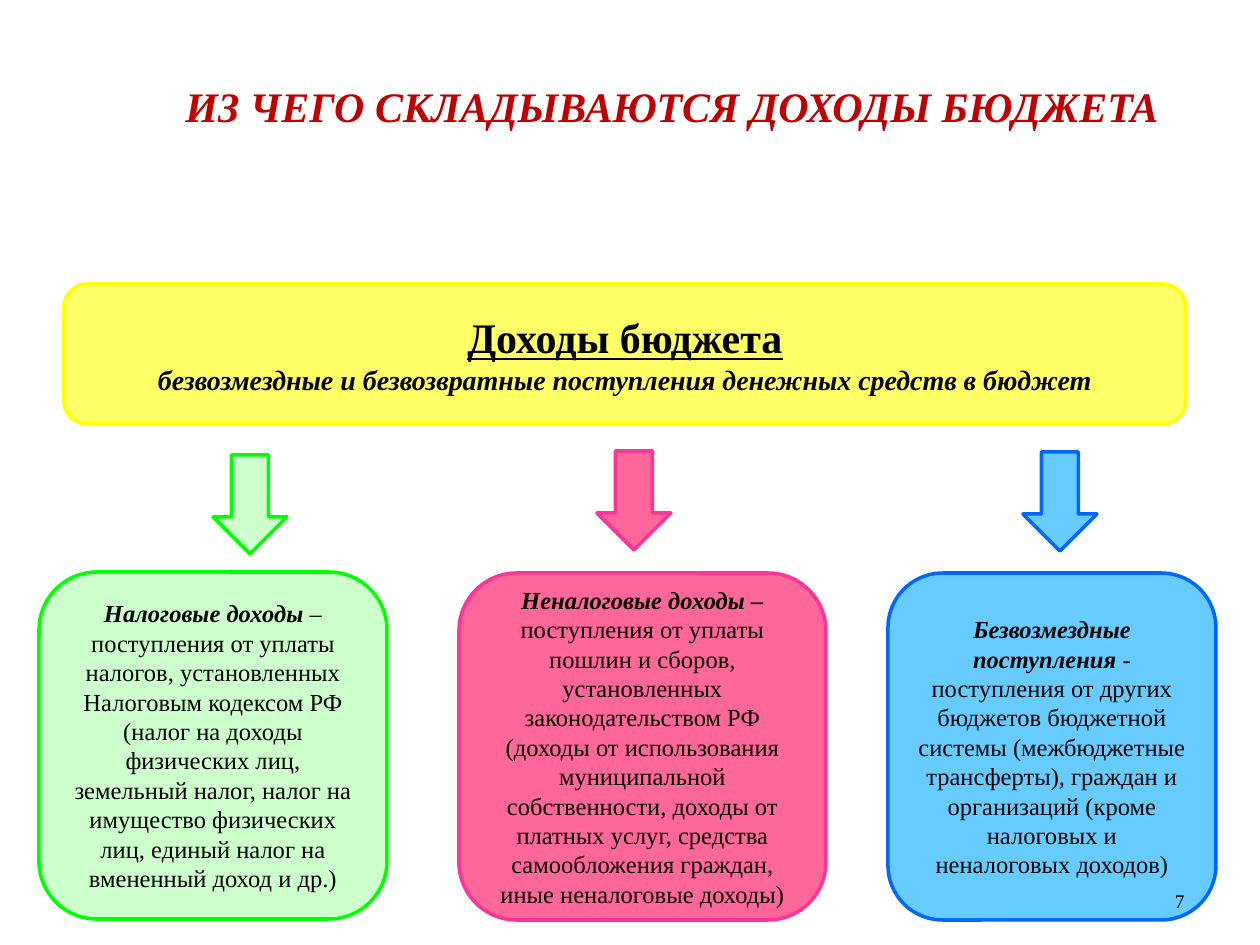
"""Build the slide on what budget revenues are made of."""
import pptx
import pptx.util
import pptx.dml.color
import pptx.enum.shapes
import pptx.enum.text

KIND = pptx.enum.shapes.MSO_SHAPE
ALIGN = pptx.enum.text.PP_ALIGN
ANCHOR = pptx.enum.text.MSO_ANCHOR
SCALE = 914400 / 126
FONT = "Times New Roman"

COLORS = {
    "black": "000000", "title": "C00000",
    "yellow": ("FFFF66", "FFFF00"),
    "green": ("CCFFCC", "00FF00"),
    "pink": ("FF6699", "FF3399"),
    "blue": ("66CCFF", "0066FF"),
}

TITLE = "ИЗ ЧЕГО СКЛАДЫВАЮТСЯ ДОХОДЫ БЮДЖЕТА"
HEAD = "Доходы бюджета"
LEAD = "безвозмездные и безвозвратные поступления денежных средств в бюджет"
PAGE = "7"

PARTS = [
    dict(tone="green", box=(39, 572, 348), arrow=(213, 455),
         name="Налоговые доходы",
         text=" – поступления от уплаты налогов, установленных Налоговым "
              "кодексом РФ (налог на доходы физических лиц, земельный налог, "
              "налог на имущество физических лиц, единый налог на вмененный "
              "доход и др.)"),
    dict(tone="pink", box=(459, 573, 367), arrow=(597, 451),
         name="Неналоговые доходы –",
         text=" поступления от уплаты пошлин и сборов, установленных "
              "законодательством РФ (доходы от использования муниципальной "
              "собственности, доходы от платных услуг, средства "
              "самообложения граждан, иные неналоговые доходы)"),
    dict(tone="blue", box=(888, 573, 328), arrow=(1023, 452),
         name="Безвозмездные поступления ",
         text="- поступления от других бюджетов бюджетной системы "
              "(межбюджетные трансферты), граждан и организаций (кроме "
              "налоговых и неналоговых доходов)"),
]
BOX_H = 347
ARROW = (74, 99)


def px(*nums):
    return [round(n * SCALE) for n in nums]


def rgb(code):
    return pptx.dml.color.RGBColor.from_string(code)


def write(para, text, size=14, color="black", bold=False, slant=False,
          under=False, align=ALIGN.CENTER):
    para.alignment = align
    run = para.add_run()
    run.text = text
    font = run.font
    font.name, font.size = FONT, pptx.util.Pt(size)
    font.bold, font.italic, font.underline = bold, slant, under
    font.color.rgb = rgb(COLORS[color])


def draw(slide, kind, tone, *place):
    shape = slide.shapes.add_shape(kind, *px(*place))
    fill, line = COLORS[tone]
    shape.shadow.inherit = False
    shape.fill.solid()
    shape.fill.fore_color.rgb = rgb(fill)
    shape.line.color.rgb = rgb(line)
    shape.line.width = pptx.util.Pt(2)
    frame = shape.text_frame
    frame.word_wrap = True
    frame.vertical_anchor = ANCHOR.MIDDLE
    return frame


def label(slide, anchor, *place):
    frame = slide.shapes.add_textbox(*px(*place)).text_frame
    frame.word_wrap = True
    frame.vertical_anchor = anchor
    return frame.paragraphs[0]


def main():
    deck = pptx.Presentation()
    deck.slide_width, deck.slide_height = px(1260, 945)
    slide = deck.slides.add_slide(deck.slide_layouts[6])

    frame = draw(slide, KIND.ROUNDED_RECTANGLE, "yellow", 64, 284, 1122, 140)
    write(frame.paragraphs[0], HEAD, size=24, bold=True, under=True)
    write(frame.add_paragraph(), LEAD, size=16, bold=True, slant=True)

    for part in PARTS:
        frame = draw(slide, KIND.ROUNDED_RECTANGLE, part["tone"],
                     *part["box"], BOX_H)
        para = frame.paragraphs[0]
        write(para, part["name"], bold=True, slant=True)
        write(para, part["text"])
        draw(slide, KIND.DOWN_ARROW, part["tone"], *part["arrow"], *ARROW)

    write(label(slide, ANCHOR.MIDDLE, 903, 876, 294, 50), PAGE,
          size=11, align=ALIGN.RIGHT)
    write(label(slide, ANCHOR.TOP, 136, 74, 1072, 64), TITLE,
          size=24, color="title", bold=True, slant=True)
    deck.save("out.pptx")


if __name__ == "__main__":
    main()
